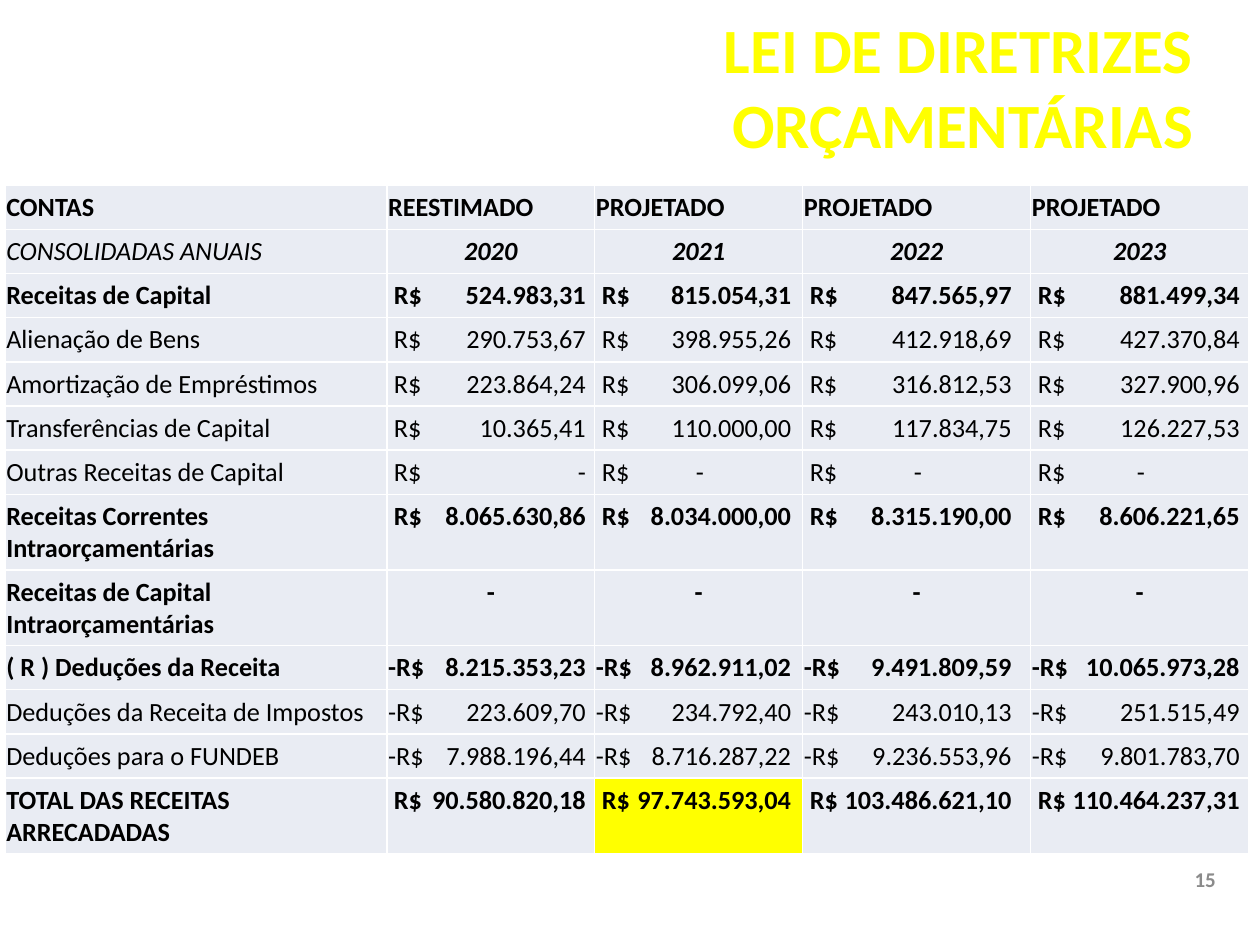
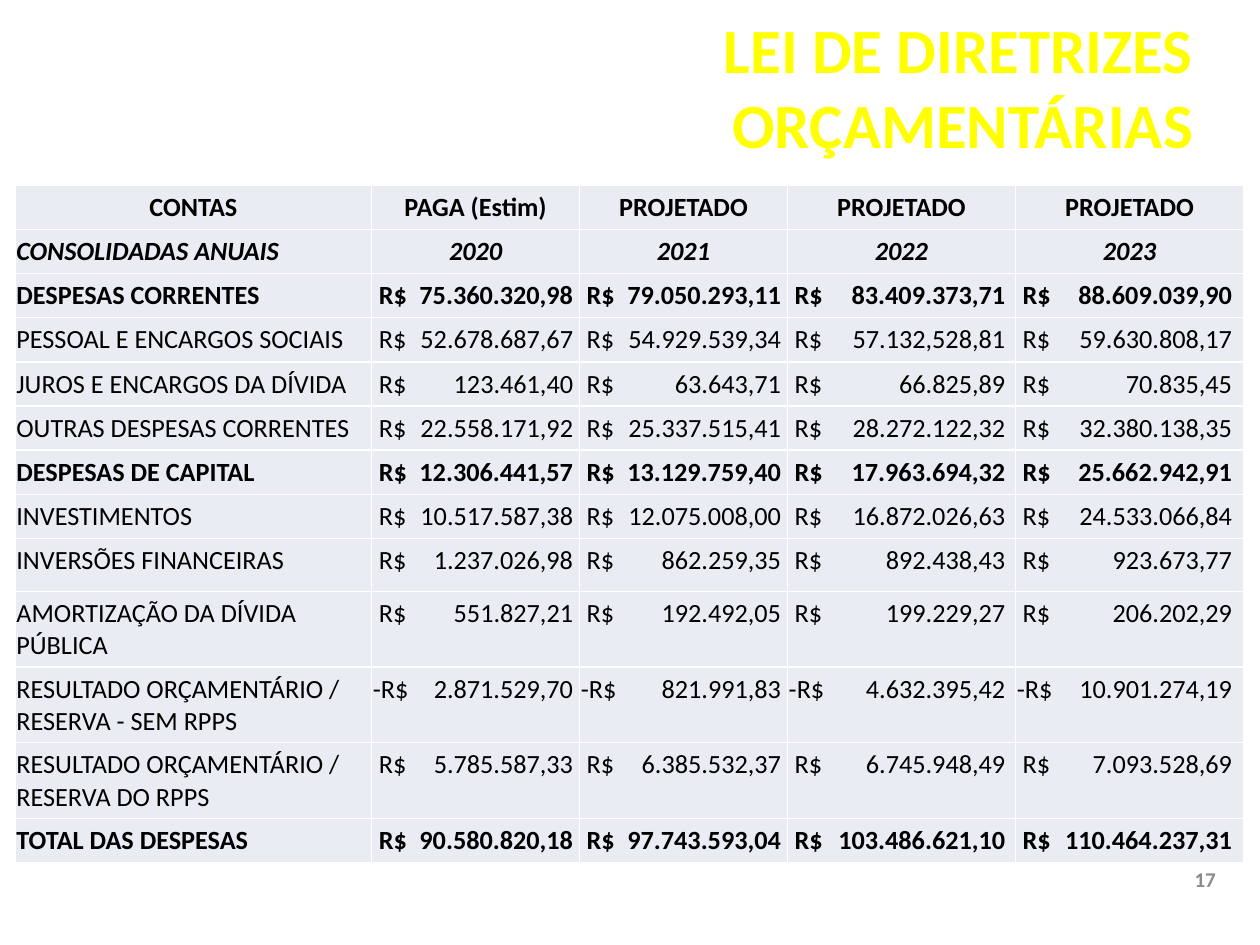
import pptx
import pptx.dml.color
import pptx.enum.text
import pptx.oxml
import pptx.oxml.ns
import pptx.util

ALIGN = pptx.enum.text.PP_ALIGN
MIDDLE = pptx.enum.text.MSO_ANCHOR.MIDDLE
FONT = "Calibri"
YELLOW, CELL, INK, GREY, WHITE = "FFFF00", "E9ECF3", "000000", "8B8B8B", "FFFFFF"
WIDTH, HEIGHT = pptx.util.Inches(10), pptx.util.Inches(7.5)
HEADING = "LEI DE DIRETRIZES ORÇAMENTÁRIAS"

REVENUE = {
    "page": "15",
    "box": (0.4, 19.6),
    "columns": (30.3, 16.5, 16.5, 18.1, 17.3),
    "amount_gaps": (0.8, 1, 1.6, 0.8),
    "heading_align": ALIGN.LEFT,
    "period_bold": False,
    "highlight": ("TOTAL DAS RECEITAS ARRECADADAS", 2),
    "heights": (3.87,) * 7 + (7.6,) * 2 + (3.87, 4.4, 3.87, 7.6),
    "rows": (
        ("heading", "CONTAS", "REESTIMADO", "PROJETADO", "PROJETADO", "PROJETADO"),
        ("period", "CONSOLIDADAS ANUAIS", "2020", "2021", "2022", "2023"),
        ("total", "Receitas de Capital", "524.983,31", "815.054,31", "847.565,97", "881.499,34"),
        ("item", "Alienação de Bens", "290.753,67", "398.955,26", "412.918,69", "427.370,84"),
        ("item", "Amortização de Empréstimos", "223.864,24", "306.099,06", "316.812,53", "327.900,96"),
        ("item", "Transferências de Capital", "10.365,41", "110.000,00", "117.834,75", "126.227,53"),
        ("item", "Outras Receitas de Capital", "-", "-", "-", "-"),
        ("total", "Receitas Correntes Intraorçamentárias",
         "8.065.630,86", "8.034.000,00", "8.315.190,00", "8.606.221,65"),
        ("empty", "Receitas de Capital Intraorçamentárias", "-", "-", "-", "-"),
        ("total", "( R ) Deduções da Receita",
         "-8.215.353,23", "-8.962.911,02", "-9.491.809,59", "-10.065.973,28"),
        ("item", "Deduções da Receita de Impostos",
         "-223.609,70", "-234.792,40", "-243.010,13", "-251.515,49"),
        ("item", "Deduções para o FUNDEB",
         "-7.988.196,44", "-8.716.287,22", "-9.236.553,96", "-9.801.783,70"),
        ("total", "TOTAL DAS RECEITAS ARRECADADAS",
         "90.580.820,18", "97.743.593,04", "103.486.621,10", "110.464.237,31"),
    ),
}

EXPENSES = {
    "page": "17",
    "box": (1.2, 19.6),
    "columns": (28.3, 16.5, 16.5, 18.1, 18.1),
    "amount_gaps": (0.6, 0.6, 0.9, 1),
    "heading_align": ALIGN.CENTER,
    "period_bold": True,
    "highlight": None,
    "heights": (4,) * 8 + (5.6,) + (7.87,) * 3 + (4,),
    "rows": (
        ("heading", "CONTAS", "PAGA (Estim)", "PROJETADO", "PROJETADO", "PROJETADO"),
        ("period", "CONSOLIDADAS ANUAIS", "2020", "2021", "2022", "2023"),
        ("total", "DESPESAS CORRENTES",
         "75.360.320,98", "79.050.293,11", "83.409.373,71", "88.609.039,90"),
        ("item", "PESSOAL E ENCARGOS SOCIAIS",
         "52.678.687,67", "54.929.539,34", "57.132,528,81", "59.630.808,17"),
        ("item", "JUROS E ENCARGOS DA DÍVIDA", "123.461,40", "63.643,71", "66.825,89", "70.835,45"),
        ("item", "OUTRAS DESPESAS CORRENTES",
         "22.558.171,92", "25.337.515,41", "28.272.122,32", "32.380.138,35"),
        ("total", "DESPESAS DE CAPITAL",
         "12.306.441,57", "13.129.759,40", "17.963.694,32", "25.662.942,91"),
        ("item", "INVESTIMENTOS",
         "10.517.587,38", "12.075.008,00", "16.872.026,63", "24.533.066,84"),
        ("item", "INVERSÕES FINANCEIRAS", "1.237.026,98", "862.259,35", "892.438,43", "923.673,77"),
        ("item", "AMORTIZAÇÃO DA DÍVIDA PÚBLICA",
         "551.827,21", "192.492,05", "199.229,27", "206.202,29"),
        ("item", "RESULTADO ORÇAMENTÁRIO / RESERVA - SEM RPPS",
         "-2.871.529,70", "-821.991,83", "-4.632.395,42", "-10.901.274,19"),
        ("item", "RESULTADO ORÇAMENTÁRIO / RESERVA DO RPPS",
         "5.785.587,33", "6.385.532,37", "6.745.948,49", "7.093.528,69"),
        ("total", "TOTAL DAS DESPESAS",
         "90.580.820,18", "97.743.593,04", "103.486.621,10", "110.464.237,31"),
    ),
}


def color(code):
    """Turn a hex string into a colour."""
    return pptx.dml.color.RGBColor.from_string(code)


def across(percent):
    """Give a share of the slide's width."""
    return round(WIDTH * percent / 100)


def down(percent):
    """Give a share of the slide's height."""
    return round(HEIGHT * percent / 100)


def write(paragraph, text, size, ink, align, bold=True, italic=False):
    """Add one formatted run to a paragraph."""
    paragraph.alignment = align
    run = paragraph.add_run()
    run.text = text
    font = run.font
    font.name, font.size, font.bold, font.italic = FONT, pptx.util.Pt(size), bold, italic
    font.color.rgb = color(ink)


def add_heading(slide, left, top, width, height):
    """Place the heading in the title placeholder."""
    heading = slide.shapes.title
    heading.left, heading.top, heading.width, heading.height = left, top, width, height
    frame = heading.text_frame
    frame.word_wrap = True
    frame.auto_size = pptx.enum.text.MSO_AUTO_SIZE.NONE
    frame.vertical_anchor = MIDDLE
    write(frame.paragraphs[0], HEADING, 36, YELLOW, ALIGN.RIGHT)


def add_page_number(slide, number, left, top, width, height):
    """Place the page number."""
    frame = slide.shapes.add_textbox(left, top, width, height).text_frame
    frame.word_wrap = True
    frame.vertical_anchor = MIDDLE
    write(frame.paragraphs[0], number, 12, GREY, ALIGN.CENTER)


def add_tab(paragraph, position, align):
    """Add a tab stop to a paragraph."""
    tabs = pptx.oxml.ns.qn("a:tabLst")
    stops = paragraph._p.get_or_add_pPr().makeelement(tabs, {})
    stop = stops.makeelement(pptx.oxml.ns.qn("a:tab"), {"pos": str(position), "algn": align})
    stops.append(stop)
    paragraph._p.get_or_add_pPr().append(stops)


def style_cell(cell, fill):
    """Give a cell its margins, white borders and fill."""
    cell.margin_left = cell.margin_right = pptx.util.Inches(0.01)
    cell.margin_top = cell.margin_bottom = pptx.util.Inches(0.05)
    properties = cell._tc.get_or_add_tcPr()
    for side in "LRTB":
        properties.append(pptx.oxml.parse_xml(
            f'<a:ln{side} {pptx.oxml.ns.nsdecls("a")} w="{pptx.util.Pt(0.96)}">'
            f'<a:solidFill><a:srgbClr val="{WHITE}"/></a:solidFill></a:ln{side}>'))
    cell.fill.solid()
    cell.fill.fore_color.rgb = color(fill)


def write_amount(paragraph, amount, width, gap, column, bold):
    """Write a currency sign and an amount set off by a tab."""
    if amount == "-" and column > 1:
        add_tab(paragraph, width // 2, "ctr")
    else:
        add_tab(paragraph, width - gap, "r")
    negative = amount.startswith("-") and amount != "-"
    text = "-R$\t" + amount[1:] if negative else " R$\t" + amount
    write(paragraph, text, 15, INK, ALIGN.LEFT, bold)


def add_accounts(slide, budget, left, top):
    """Build the table of accounts from its top left corner."""
    widths = [across(share) for share in budget["columns"]]
    heights = [down(share) for share in budget["heights"]]
    accounts = slide.shapes.add_table(
        len(heights), len(widths), left, top, sum(widths), sum(heights)).table
    accounts.first_row = accounts.horz_banding = False
    for column, width in zip(accounts.columns, widths):
        column.width = width
    for row, (kind, *entries) in enumerate(budget["rows"]):
        accounts.rows[row].height = heights[row]
        for column, entry in enumerate(entries):
            cell = accounts.cell(row, column)
            style_cell(cell, YELLOW if (entries[0], column) == budget["highlight"] else CELL)
            paragraph = cell.text_frame.paragraphs[0]
            bold = kind != "item"
            if column and kind in ("item", "total"):
                gap = across(budget["amount_gaps"][column - 1])
                write_amount(paragraph, entry, widths[column], gap, column, bold)
                continue
            align = ALIGN.CENTER if column else ALIGN.LEFT
            if kind == "heading":
                align = budget["heading_align"]
            if kind == "period" and not column:
                bold = budget["period_bold"]
            write(paragraph, entry, 15, INK, align, bold, kind == "period")


def add_budget_slide(deck, budget):
    """Add a slide with heading, page number and accounts."""
    slide = deck.slides.add_slide(deck.slide_layouts[5])
    add_page_number(slide, budget["page"], across(93.3), down(89.87), across(4.7), down(6.27))
    add_heading(slide, across(30.6), down(2.27), across(65.1), down(13.6))
    left, top = budget["box"]
    add_accounts(slide, budget, across(left), down(top))


def main():
    """Build and save the deck."""
    deck = pptx.Presentation()
    deck.slide_width, deck.slide_height = WIDTH, HEIGHT
    for budget in (REVENUE, EXPENSES):
        add_budget_slide(deck, budget)
    deck.save("out.pptx")


if __name__ == "__main__":
    main()
